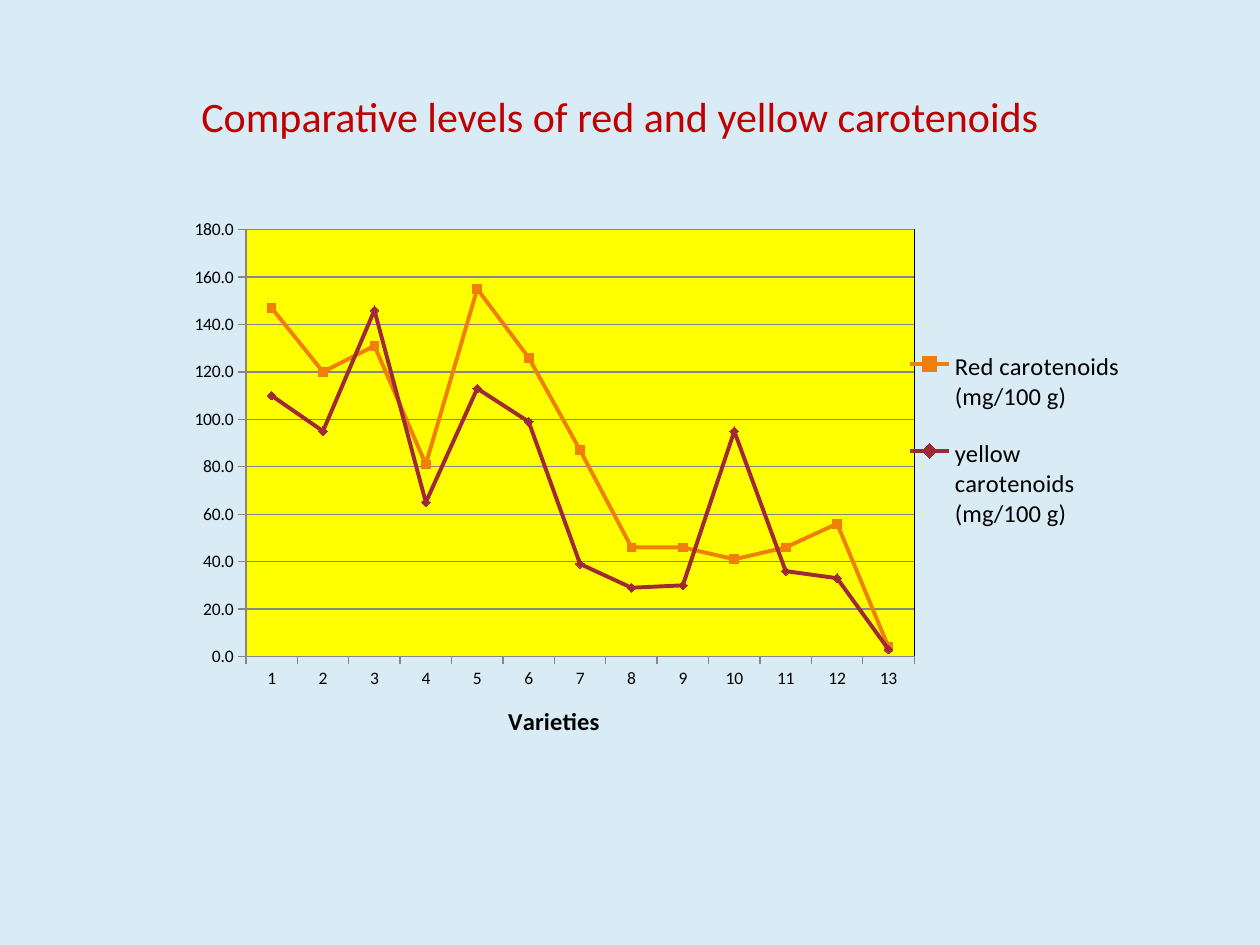
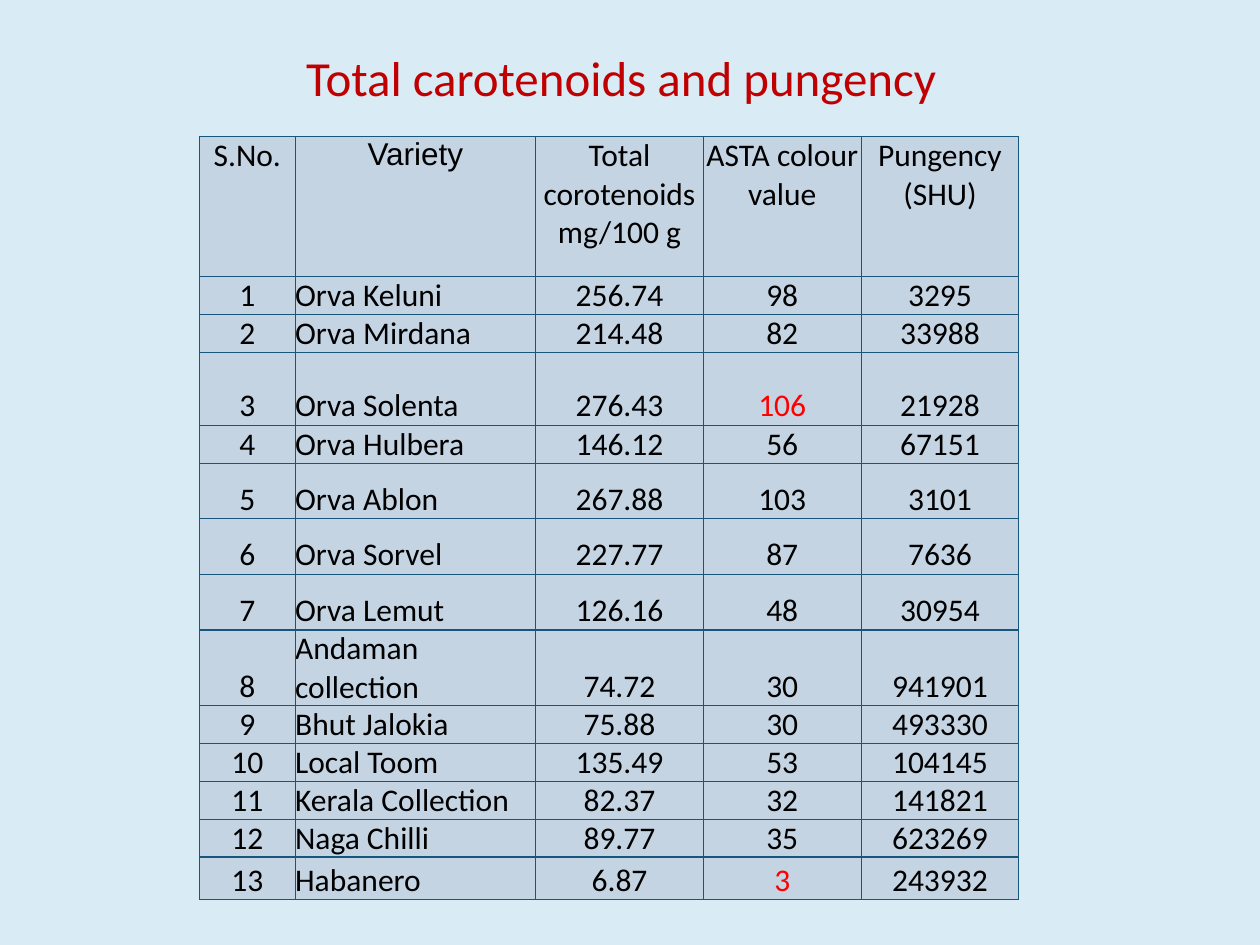
from dataclasses import dataclass

from pptx import Presentation
from pptx.chart.data import CategoryChartData
from pptx.dml.color import RGBColor
from pptx.enum.chart import XL_CHART_TYPE, XL_LEGEND_POSITION, XL_MARKER_STYLE, XL_TICK_MARK
from pptx.enum.text import MSO_ANCHOR, MSO_AUTO_SIZE, PP_ALIGN
from pptx.oxml import parse_xml
from pptx.oxml.ns import nsdecls
from pptx.util import Cm, Pt


@dataclass(frozen=True)
class Theme:
    background: str = "D9EBF5"
    title: str = "C00000"
    ink: str = "000000"
    highlight: str = "FF0000"
    cell: str = "C5D4E3"
    border: str = "18577C"
    plot: str = "FFFF00"
    grid: str = "868686"
    font: str = "Calibri"
    variety_font: str = "Arial"
    axis_size: float = 10
    legend_size: float = 14
    table_size: float = 18


THEME = Theme()


@dataclass(frozen=True)
class Heading:
    text: str
    left: float
    top: float
    width: float
    height: float
    size: float


@dataclass(frozen=True)
class Pigment:
    name: str
    levels: tuple
    color: str
    marker: XL_MARKER_STYLE


@dataclass(frozen=True)
class Variety:
    name: str
    carotenoids: str
    asta: str
    pungency: str
    height: float = 0.74
    extreme: bool = False


@dataclass(frozen=True)
class Column:
    label: str
    width: float
    font: str = THEME.font


LEVELS_HEADING = Heading("Comparative levels of red and yellow carotenoids",
                         3.81, 1.7, 17.55, 1.27, 24)
PUNGENCY_HEADING = Heading("Total carotenoids and pungency", 5.92, 0.84, 13.36, 1.45, 28)

PIGMENTS = (
    Pigment("Red carotenoids (mg/100 g)",
            (147, 120, 131, 81, 155, 126, 87, 46, 46, 41, 46, 56, 4),
            "F07F09", XL_MARKER_STYLE.SQUARE),
    Pigment("yellow carotenoids (mg/100 g)",
            (110, 95, 146, 65, 113, 99, 39, 29, 30, 95, 36, 33, 3),
            "9F2936", XL_MARKER_STYLE.DIAMOND),
)

COLUMNS = (
    Column("S.No.", 1.93),
    Column("Variety", 4.85, THEME.variety_font),
    Column("Total corotenoids mg/100 g", 3.38),
    Column("ASTA colour value", 3.18),
    Column("Pungency (SHU)", 3.18),
)
HEADER_HEIGHT = 2.82

VARIETIES = (
    Variety("Orva Keluni", "256.74", "98", "3295"),
    Variety("Orva Mirdana", "214.48", "82", "33988"),
    Variety("Orva Solenta", "276.43", "106", "21928", 1.47, extreme=True),
    Variety("Orva Hulbera", "146.12", "56", "67151"),
    Variety("Orva Ablon", "267.88", "103", "3101", 1.12),
    Variety("Orva Sorvel", "227.77", "87", "7636", 1.12),
    Variety("Orva Lemut", "126.16", "48", "30954", 1.12),
    Variety("Andaman collection", "74.72", "30", "941901", 1.47),
    Variety("Bhut Jalokia", "75.88", "30", "493330"),
    Variety("Local Toom", "135.49", "53", "104145"),
    Variety("Kerala Collection", "82.37", "32", "141821"),
    Variety("Naga Chilli", "89.77", "35", "623269"),
    Variety("Habanero", "6.87", "3", "243932", 0.86, extreme=True),
)


# Shared helpers
def style_font(font, size: float, color: str = THEME.ink, name: str = THEME.font,
               bold: bool = False) -> None:
    font.size, font.name, font.bold = Pt(size), name, bold
    font.color.rgb = RGBColor.from_string(color)


def style_line(line, color: str, width: float) -> None:
    line.color.rgb = RGBColor.from_string(color)
    line.width = Pt(width)


def write(frame, text: str, *, align: PP_ALIGN = PP_ALIGN.LEFT, **style) -> None:
    paragraph = frame.paragraphs[0]
    paragraph.alignment = align
    run = paragraph.add_run()
    run.text = text
    style_font(run.font, **style)


def add_titled_slide(deck, heading: Heading):
    slide = deck.slides.add_slide(deck.slide_layouts[6])
    slide.background.fill.solid()
    slide.background.fill.fore_color.rgb = RGBColor.from_string(THEME.background)
    box = slide.shapes.add_textbox(Cm(heading.left), Cm(heading.top),
                                   Cm(heading.width), Cm(heading.height))
    box.text_frame.word_wrap = False
    box.text_frame.auto_size = MSO_AUTO_SIZE.SHAPE_TO_FIT_TEXT
    write(box.text_frame, heading.text, size=heading.size, color=THEME.title)
    return slide


# Chart parts
def place(element, index: int, target: str = "", **fractions: float) -> None:
    """Give a chart part a manual layout in fractions of the chart."""
    for automatic in element.findall("{*}layout"):
        element.remove(automatic)
    modes = '<c:xMode val="edge"/><c:yMode val="edge"/>'
    values = "".join(f'<c:{key} val="{value}"/>' for key, value in fractions.items())
    element.insert(index, parse_xml(
        f'<c:layout {nsdecls("c")}><c:manualLayout>{target}{modes}{values}'
        "</c:manualLayout></c:layout>"))


def style_axis(axis) -> None:
    axis.major_tick_mark = XL_TICK_MARK.OUTSIDE
    axis.minor_tick_mark = XL_TICK_MARK.NONE
    style_font(axis.tick_labels.font, THEME.axis_size)
    style_line(axis.format.line, THEME.grid, 0.75)


def add_levels_chart(slide) -> None:
    levels = CategoryChartData(number_format="0.0")
    levels.categories = [str(number) for number in range(1, len(VARIETIES) + 1)]
    for pigment in PIGMENTS:
        levels.add_series(pigment.name, pigment.levels)
    chart = slide.shapes.add_chart(XL_CHART_TYPE.LINE_MARKERS, Cm(3.61), Cm(4.2),
                                   Cm(19.25), Cm(10.8), levels).chart
    chart.has_title = False
    style_font(chart.font, THEME.axis_size)
    chart.plots[0].vary_by_categories = False

    for series, pigment in zip(chart.plots[0].series, PIGMENTS):
        series.smooth = False
        style_line(series.format.line, pigment.color, 2.25)
        series.marker.style, series.marker.size = pigment.marker, 5
        series.marker.format.fill.solid()
        series.marker.format.fill.fore_color.rgb = RGBColor.from_string(pigment.color)
        style_line(series.marker.format.line, pigment.color, 0.75)

    # Axes
    numbers, amounts = chart.category_axis, chart.value_axis
    style_axis(numbers)
    style_axis(amounts)
    amounts.minimum_scale, amounts.maximum_scale, amounts.major_unit = 0, 180, 20
    amounts.tick_labels.number_format = "0.0"
    amounts.tick_labels.number_format_is_linked = False
    amounts.has_major_gridlines = True
    style_line(amounts.major_gridlines.format.line, THEME.grid, 0.75)
    write(numbers.axis_title.text_frame, "Varieties", align=PP_ALIGN.CENTER,
          size=THEME.legend_size, bold=True)
    place(numbers.axis_title._element, 1, x=0.34, y=0.92)

    # Legend
    chart.has_legend = True
    chart.legend.position = XL_LEGEND_POSITION.RIGHT
    chart.legend.include_in_layout = False
    style_font(chart.legend.font, THEME.legend_size)
    place(chart.legend._element, 1, x=0.76, y=0.22, w=0.23, h=0.43)

    # Plot area
    plot_area = chart._chartSpace.chart.plotArea
    place(plot_area, 0, '<c:layoutTarget val="inner"/>', x=0.07, y=0.04, w=0.7, h=0.8)
    plot_area.append(parse_xml(
        f'<c:spPr {nsdecls("c", "a")}>'
        f'<a:solidFill><a:srgbClr val="{THEME.plot}"/></a:solidFill>'
        f'<a:ln w="3175"><a:solidFill><a:srgbClr val="{THEME.ink}"/></a:solidFill></a:ln>'
        "</c:spPr>"))


# Table parts
def fill_cell(cell, text: str, *, anchor: MSO_ANCHOR = MSO_ANCHOR.BOTTOM, **style) -> None:
    cell.margin_left = cell.margin_right = cell.margin_top = cell.margin_bottom = 0
    cell.vertical_anchor = anchor
    write(cell.text_frame, text, size=THEME.table_size, **style)
    properties = cell._tc.get_or_add_tcPr()
    for side in "LRTB":
        properties.append(parse_xml(
            f'<a:ln{side} {nsdecls("a")} w="{Pt(0.75)}"><a:solidFill>'
            f'<a:srgbClr val="{THEME.border}"/></a:solidFill></a:ln{side}>'))
    cell.fill.solid()
    cell.fill.fore_color.rgb = RGBColor.from_string(THEME.cell)


def add_variety_table(slide) -> None:
    heights = [HEADER_HEIGHT] + [variety.height for variety in VARIETIES]
    table = slide.shapes.add_table(
        len(heights), len(COLUMNS), Cm(4.02), Cm(2.76),
        Cm(sum(column.width for column in COLUMNS)), Cm(sum(heights))).table
    table.first_row = table.horz_banding = False
    for row, height in zip(table.rows, heights):
        row.height = Cm(height)
    for index, column in enumerate(COLUMNS):
        table.columns[index].width = Cm(column.width)
        fill_cell(table.cell(0, index), column.label, anchor=MSO_ANCHOR.TOP,
                  align=PP_ALIGN.CENTER, name=column.font)

    for number, variety in enumerate(VARIETIES, start=1):
        entries = (str(number), variety.name, variety.carotenoids,
                   variety.asta, variety.pungency)
        for index, (column, entry) in enumerate(zip(COLUMNS, entries)):
            is_extreme = variety.extreme and column.label == "ASTA colour value"
            fill_cell(table.cell(number, index), entry,
                      align=PP_ALIGN.LEFT if column.label == "Variety" else PP_ALIGN.CENTER,
                      color=THEME.highlight if is_extreme else THEME.ink)


def main() -> None:
    deck = Presentation()
    deck.slide_width, deck.slide_height = Cm(25.4), Cm(19.05)
    add_levels_chart(add_titled_slide(deck, LEVELS_HEADING))
    add_variety_table(add_titled_slide(deck, PUNGENCY_HEADING))
    deck.save("out.pptx")


if __name__ == "__main__":
    main()
